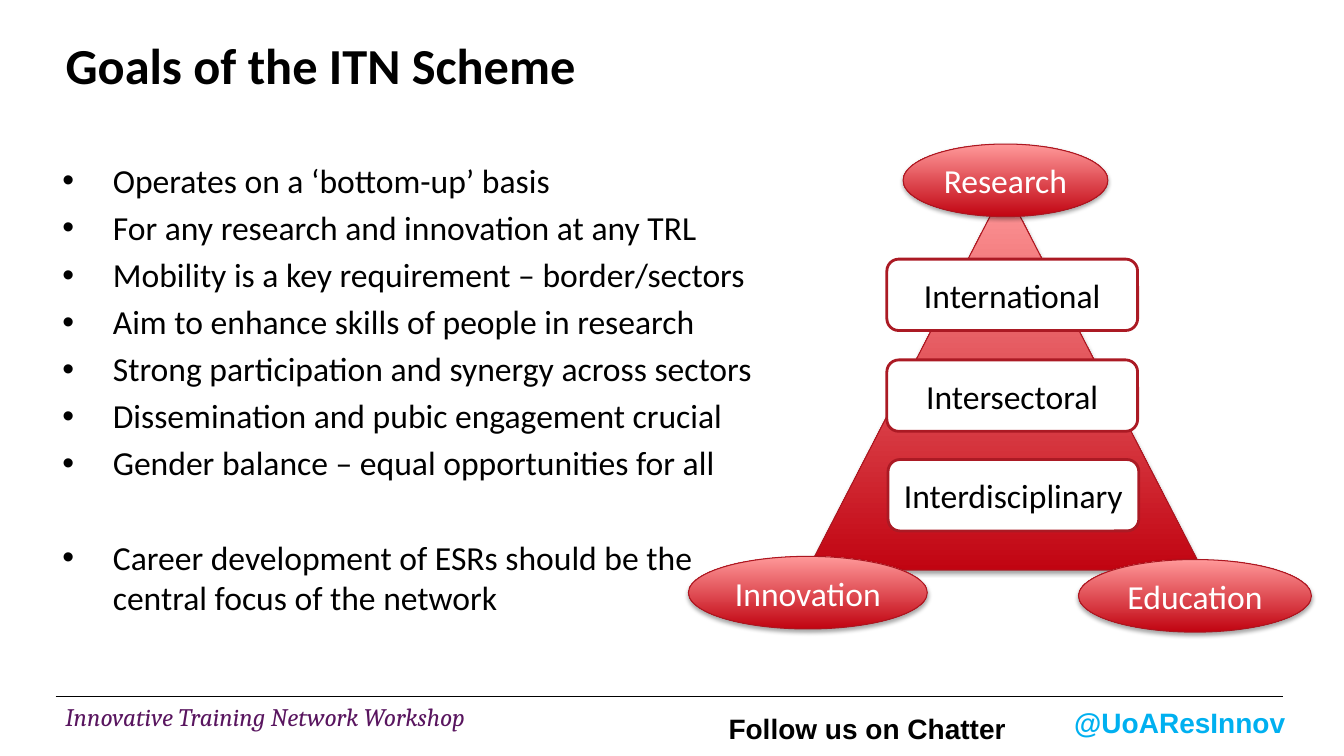
"""Build the slide on the goals of the ITN scheme."""
from dataclasses import dataclass

import pptx
import pptx.dml.color
import pptx.enum.shapes
import pptx.enum.text
import pptx.oxml.ns
import pptx.util
from lxml import etree

Cm = pptx.util.Cm
Pt = pptx.util.Pt
Shapes = pptx.enum.shapes.MSO_SHAPE
Anchor = pptx.enum.text.MSO_ANCHOR
Align = pptx.enum.text.PP_ALIGN
qn = pptx.oxml.ns.qn

BLACK, WHITE = "000000", "FFFFFF"
DARK_RED, LIGHT_RED = "C10411", "FF999A"
PILLAR_LINE, THEME_LINE = "AB1620", "AB1A24"
FOOTER_PURPLE, HANDLE_BLUE = "59155F", "00B0F0"
GOAL_SPACING, FINAL_GOAL_SPACING = 4.8, 38.4

GOALS = [
    "Operates on a ‘bottom-up’ basis",
    "For any research and innovation at any TRL",
    "Mobility is a key requirement – border/sectors",
    "Aim to enhance skills of people in research",
    "Strong participation and synergy across sectors",
    "Dissemination and pubic engagement crucial",
    "Gender balance – equal opportunities for all",
    "Career development of ESRs should be the central focus of the network",
]


@dataclass
class Box:
    """Place and size in centimetres."""
    left: float
    top: float
    width: float
    height: float

    def lengths(self) -> tuple:
        """Return the four values as lengths."""
        return Cm(self.left), Cm(self.top), Cm(self.width), Cm(self.height)


@dataclass
class Label:
    """A shape or text box with its wording."""
    text: str
    box: Box


@dataclass
class Caption(Label):
    """A footer text with its format."""
    anchor: Anchor
    style: dict
    wrap: bool = True


PILLARS = [
    Label("Research", Box(22.76, 3.63, 5.16, 1.83)),
    Label("Innovation", Box(17.35, 14.02, 6.02, 1.83)),
    Label("Education", Box(27.18, 14.1, 5.87, 1.83)),
]
THEMES = [
    Label("International", Box(22.35, 6.53, 6.32, 1.8)),
    Label("Intersectoral", Box(22.35, 9.07, 6.32, 1.8)),
    Label("Interdisciplinary", Box(22.38, 11.58, 6.32, 1.8)),
]
CAPTIONS = [
    Caption("Innovative Training Network Workshop", Box(1.4, 17.55, 17.96, 0.97), Anchor.TOP,
            {"size": 18, "font": "Cambria", "color": FOOTER_PURPLE, "italic": True}),
    Caption("@UoAResInnov", Box(26.82, 17.65, 9.25, 1.12), Anchor.MIDDLE,
            {"size": 20, "font": "Arial", "color": HANDLE_BLUE, "bold": True}),
    Caption("Follow us on Chatter", Box(18.11, 17.78, 7.6, 1.12), Anchor.MIDDLE,
            {"size": 20, "font": "Arial", "bold": True}, wrap=False),
]


def rgb(value: str) -> pptx.dml.color.RGBColor:
    """Turn a hex string into a colour."""
    return pptx.dml.color.RGBColor.from_string(value)


def write(paragraph, text: str, *, size: float = 24, font: str = "Calibri", color: str = BLACK,
          bold: bool = False, italic: bool = False, align: Align = Align.LEFT,
          before: float = 0) -> None:
    """Put formatted text into a paragraph."""
    paragraph.alignment = align
    paragraph.space_before = Pt(before)
    run = paragraph.add_run()
    run.text = text
    run.font.size = Pt(size)
    run.font.name = font
    run.font.bold = bold
    run.font.italic = italic
    run.font.color.rgb = rgb(color)


def place(shape, box: Box, anchor: Anchor, wrap: bool = True):
    """Move a text shape and return its prepared text frame."""
    shape.left, shape.top, shape.width, shape.height = box.lengths()
    frame = shape.text_frame
    frame.word_wrap = wrap
    frame.auto_size = pptx.enum.text.MSO_AUTO_SIZE.NONE
    frame.vertical_anchor = anchor
    return frame


def add_outlined(slide, kind: Shapes, box: Box, line: str, width: float):
    """Add a preset shape with an outline and no shadow."""
    shape = slide.shapes.add_shape(kind, *box.lengths())
    shape.shadow.inherit = False
    shape.line.color.rgb = rgb(line)
    shape.line.width = Pt(width)
    return shape


def add_glossy(slide, kind: Shapes, box: Box):
    """Add a red gradient shape with a soft shadow below."""
    shape = add_outlined(slide, kind, box, PILLAR_LINE, 0.75)
    shape.fill.gradient()
    shape.fill.gradient_angle = 90
    for stop, color in zip(shape.fill.gradient_stops, (DARK_RED, LIGHT_RED)):
        stop.color.rgb = rgb(color)
    effects = shape.element.spPr.find(qn("a:effectLst"))
    shadow = etree.SubElement(effects, qn("a:outerShdw"), blurRad=str(Pt(3.1)),
                              dist=str(Pt(1.8)), dir="5400000", rotWithShape="0")
    shade = etree.SubElement(shadow, qn("a:srgbClr"), val=BLACK)
    etree.SubElement(shade, qn("a:alpha"), val="35000")
    return shape


def label_shape(shape, text: str, color: str) -> None:
    """Centre a label in a shape."""
    frame = shape.text_frame
    frame.word_wrap = False
    frame.vertical_anchor = Anchor.MIDDLE
    write(frame.paragraphs[0], text, color=color, align=Align.CENTER)


def add_goals(frame) -> None:
    """Write the bulleted goals, with the last one set apart."""
    for index, goal in enumerate(GOALS):
        paragraph = frame.add_paragraph() if index else frame.paragraphs[0]
        properties = paragraph._p.get_or_add_pPr()
        properties.set("marL", str(Cm(1.27)))
        properties.set("indent", str(-Cm(1.27)))
        etree.SubElement(properties, qn("a:buFont"), typeface="Arial")
        etree.SubElement(properties, qn("a:buChar"), char="•")
        before = FINAL_GOAL_SPACING if goal == GOALS[-1] else GOAL_SPACING
        write(paragraph, goal, before=before if index else 0)


def add_footer(slide) -> None:
    """Draw the footer rule and its captions."""
    rule = slide.shapes.add_connector(pptx.enum.shapes.MSO_CONNECTOR.STRAIGHT,
                                      Cm(1.4), Cm(17.55), Cm(32.33), Cm(17.55))
    rule.line.color.rgb = rgb(BLACK)
    rule.line.width = Pt(0.75)
    etree.SubElement(rule.element.spPr, qn("a:effectLst"))
    for caption in CAPTIONS:
        shape = slide.shapes.add_textbox(*caption.box.lengths())
        frame = place(shape, caption.box, caption.anchor, caption.wrap)
        write(frame.paragraphs[0], caption.text, **caption.style)


def main() -> None:
    """Build and save the presentation."""
    presentation = pptx.Presentation()
    presentation.slide_width, presentation.slide_height = Cm(33.87), Cm(19.05)
    slide = presentation.slides.add_slide(presentation.slide_layouts[1])

    title = place(slide.shapes.title, Box(1.4, 0.71, 23.7, 1.8), Anchor.MIDDLE)
    write(title.paragraphs[0], "Goals of the ITN Scheme", size=36, bold=True)
    add_goals(place(slide.placeholders[1], Box(1.32, 3.91, 17.96, 13.21), Anchor.TOP))
    add_footer(slide)

    add_glossy(slide, Shapes.ISOSCELES_TRIANGLE, Box(20.35, 4.72, 9.96, 9.65))
    for theme in THEMES:
        shape = add_outlined(slide, Shapes.ROUNDED_RECTANGLE, theme.box, THEME_LINE, 2)
        shape.fill.solid()
        shape.fill.fore_color.rgb = rgb(WHITE)
        label_shape(shape, theme.text, BLACK)
    for pillar in PILLARS:
        label_shape(add_glossy(slide, Shapes.OVAL, pillar.box), pillar.text, WHITE)

    presentation.save("out.pptx")


if __name__ == "__main__":
    main()
